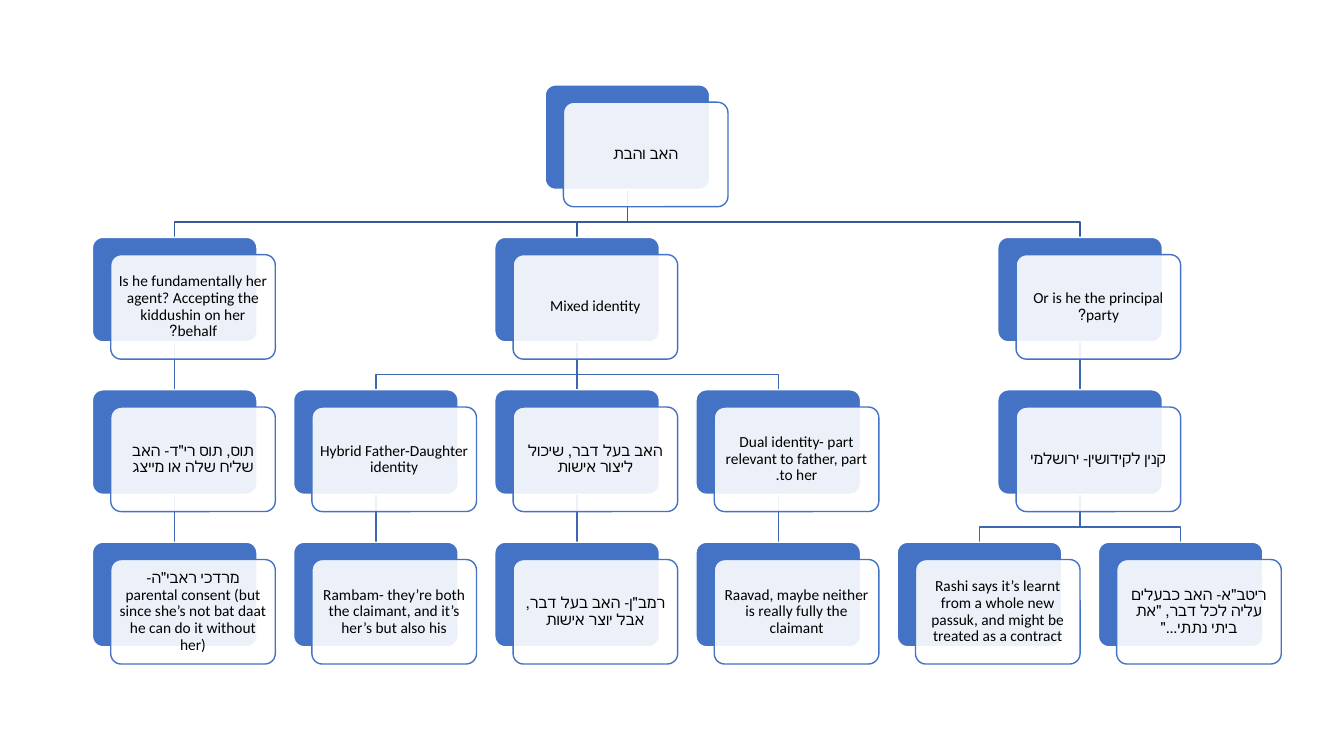
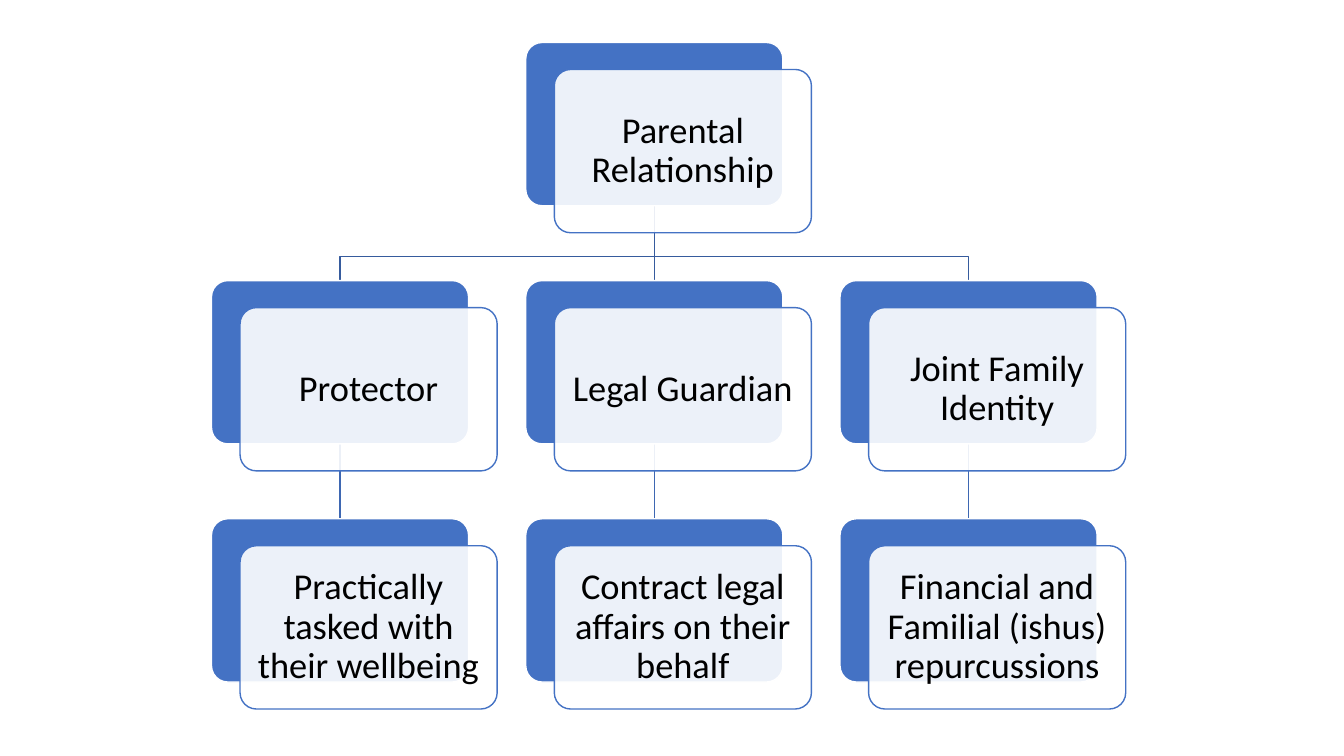
from dataclasses import dataclass, field

from lxml.etree import SubElement
from pptx import Presentation
from pptx.dml.color import RGBColor as RGB
from pptx.enum.shapes import MSO_CONNECTOR as Connector, MSO_SHAPE as Preset
from pptx.enum.text import MSO_ANCHOR as Anchor, PP_ALIGN as Align
from pptx.oxml.ns import qn
from pptx.util import Cm, Pt


@dataclass(frozen=True)
class Theme:
    font: str = "Calibri"
    small: int = 11
    large: int = 26
    text: RGB = RGB(0, 0, 0)
    accent: RGB = RGB(0x44, 0x72, 0xC4)
    paper: RGB = RGB(0xFF, 0xFF, 0xFF)
    root_link: RGB = RGB(0x36, 0x5B, 0x9D)
    branch_link: RGB = RGB(0x3E, 0x67, 0xB2)
    rule: float = 1
    front_opacity: int = 90
    corner: float = 0.1
    line_spacing: float = 0.9


@dataclass
class Topic:
    text: str
    children: list = field(default_factory=list)
    column: float = 0
    level: int = 0


@dataclass(frozen=True)
class Grid:
    """Card measures in cm, all in proportion to the card width."""
    left: float
    top: float
    card: float

    @property
    def height(self):
        return self.card * 0.635

    @property
    def shift(self):
        return self.card / 9, self.card * 0.105

    def corner(self, topic):
        return (self.left + topic.column * self.card * 11 / 9,
                self.top + topic.level * (self.height + self.card * 0.291))

    def centre(self, topic):
        # The lines run through the middle of the back and front cards
        return self.corner(topic)[0] + self.card / 2


THEME = Theme()

FATHER_AND_DAUGHTER = Topic("האב והבת", [
    Topic("Is he fundamentally her agent? Accepting the kiddushin on her behalf?", [
        Topic('תוס, תוס רי"ד- האב שליח שלה או מייצג', [
            Topic('מרדכי ראבי"ה- parental consent (but since she’s not bat daat '
                  'he can do it without her)')])]),
    Topic("Mixed identity", [
        Topic("Hybrid Father-Daughter identity", [
            Topic("Rambam- they’re both the claimant, and it’s her’s but also his")]),
        Topic("האב בעל דבר, שיכול ליצור אישות", [
            Topic('רמב"ן- האב בעל דבר, אבל יוצר אישות')]),
        Topic("Dual identity- part relevant to father, part to her.", [
            Topic("Raavad, maybe neither is really fully the claimant")])]),
    Topic("Or is he the principal party?", [
        Topic("קנין לקידושין- ירושלמי", [
            Topic("Rashi says it’s learnt from a whole new passuk, "
                  "and might be treated as a contract"),
            Topic('ריטב"א- האב כבעלים עליה לכל דבר, "את ביתי נתתי..."')])]),
])

PARENTAL_RELATIONSHIP = Topic("Parental Relationship", [
    Topic("Protector", [Topic("Practically tasked with their wellbeing")]),
    Topic("Legal Guardian", [Topic("Contract legal affairs on their behalf")]),
    Topic("Joint Family Identity", [
        Topic("Financial and Familial (ishus) repurcussions")]),
])


def arrange(topic, level=0, leaves=0):
    """Give leaves successive columns, centre parents; return the leaf count."""
    topic.level = level
    if not topic.children:
        topic.column = leaves
        return leaves + 1
    for child in topic.children:
        leaves = arrange(child, level + 1, leaves)
    topic.column = (topic.children[0].column + topic.children[-1].column) / 2
    return leaves


def walk(topic):
    yield topic
    for child in topic.children:
        yield from walk(child)


def draw_link(slide, grid, parent, child):
    start_x, end_x = Cm(grid.centre(parent)), Cm(grid.centre(child))
    start_y = Cm(grid.corner(parent)[1] + grid.height)
    end_y = Cm(grid.corner(child)[1])
    if start_x == end_x:
        link = slide.shapes.add_connector(
            Connector.STRAIGHT, start_x, start_y, end_x, end_y)
    else:
        bar_y = start_y + round((end_y - start_y) * 0.68)
        elbow = slide.shapes.build_freeform(start_x, start_y)
        elbow.add_line_segments(
            [(start_x, bar_y), (end_x, bar_y), (end_x, end_y)], close=False)
        link = elbow.convert_to_shape()
        link.fill.background()
    link.line.color.rgb = THEME.branch_link if parent.level else THEME.root_link
    link.line.width = Pt(THEME.rule)
    SubElement(link.element.spPr, qn("a:effectLst"))


def draw_card(slide, grid, left, top, fill, outline):
    card = slide.shapes.add_shape(Preset.ROUNDED_RECTANGLE, Cm(left), Cm(top),
                                  Cm(grid.card), Cm(grid.height))
    card.adjustments[0] = THEME.corner
    card.shadow.inherit = False
    card.fill.solid()
    card.fill.fore_color.rgb = fill
    card.line.color.rgb = outline
    card.line.width = Pt(THEME.rule)
    return card


def write_label(card, text, size):
    frame = card.text_frame
    frame.word_wrap = True
    frame.vertical_anchor = Anchor.MIDDLE
    frame.margin_left = frame.margin_right = Cm(size * 0.0106)
    frame.margin_top = frame.margin_bottom = frame.margin_left
    label = frame.paragraphs[0]
    label.text = text
    label.alignment = Align.CENTER
    label.line_spacing = THEME.line_spacing
    label.font.name = THEME.font
    label.font.size = Pt(size)
    label.font.color.rgb = THEME.text
    # Right-to-left reading order
    label._p.get_or_add_pPr().set("rtl", "1")


def draw_topic(slide, grid, topic, size):
    left, top = grid.corner(topic)
    shift_x, shift_y = grid.shift
    draw_card(slide, grid, left, top, THEME.accent, THEME.paper)
    front = draw_card(slide, grid, left + shift_x, top + shift_y,
                      THEME.paper, THEME.accent)
    # Let the back card show faintly through the front one
    paper = front.element.spPr.find(qn("a:solidFill"))[0]
    SubElement(paper, qn("a:alpha"), val=str(THEME.front_opacity * 1000))
    write_label(front, topic.text, size)


def add_tree_slide(deck, root, left, top, width, size):
    """Draw a topic tree from the given corner, filling the given width in cm."""
    slide = deck.slides.add_slide(deck.slide_layouts[6])
    columns = arrange(root)
    grid = Grid(left, top, card=width * 9 / (11 * columns - 1))
    # Lines lie behind all cards
    for parent in walk(root):
        for child in parent.children:
            draw_link(slide, grid, parent, child)
    for topic in walk(root):
        draw_topic(slide, grid, topic, size)


def main():
    deck = Presentation()
    deck.slide_width, deck.slide_height = Cm(33.87), Cm(19.05)
    add_tree_slide(deck, FATHER_AND_DAUGHTER, 2.33, 2.14, 29.96, THEME.small)
    add_tree_slide(deck, PARENTAL_RELATIONSHIP, 5.33, 1.07, 23.04, THEME.large)
    deck.save("out.pptx")


if __name__ == "__main__":
    main()
